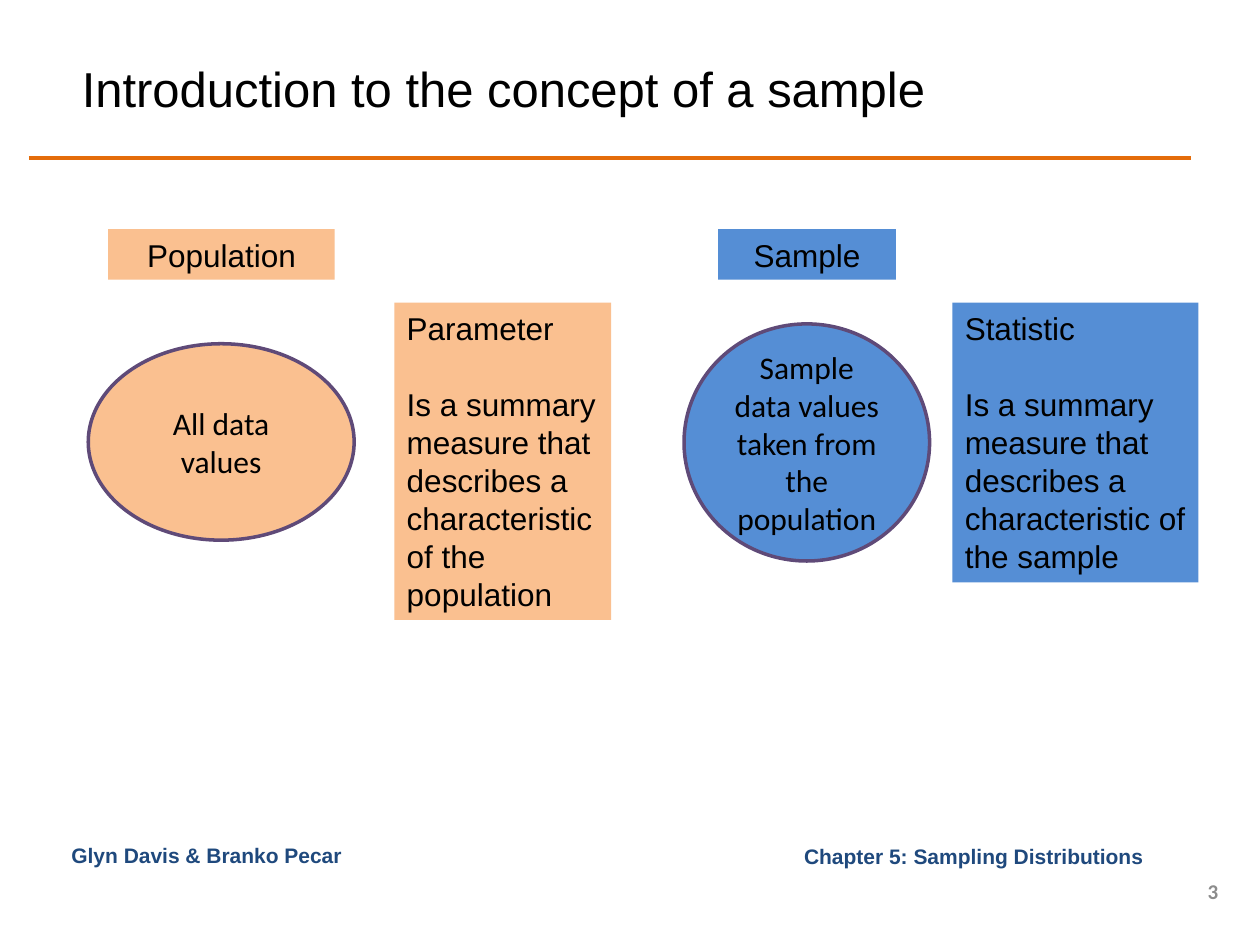
from dataclasses import dataclass

from lxml.etree import SubElement
from pptx import Presentation
from pptx.dml.color import RGBColor
from pptx.enum.shapes import MSO_CONNECTOR, MSO_SHAPE
from pptx.enum.text import MSO_ANCHOR as Anchor, PP_ALIGN as Align
from pptx.oxml.ns import qn
from pptx.util import Cm, Pt


def colour(hex_string):
    return RGBColor.from_string(hex_string)


@dataclass
class SlideBuilder:
    slide: object
    font: str = "Arial"
    body_size: int = 18
    line_height: float = 21.7
    ink: str = "000000"
    footer_ink: str = "1F497D"
    outline: str = "5F4A78"
    rule_colour: str = "E46C0A"

    def add_lines(self, shape, lines, size, ink, font=None, bold=False,
                  align=Align.LEFT, anchor=Anchor.MIDDLE, spacing=None):
        frame = shape.text_frame
        frame.word_wrap = True
        frame.vertical_anchor = anchor
        for index, line in enumerate(lines):
            paragraph = frame.add_paragraph() if index else frame.paragraphs[0]
            paragraph.alignment = align
            if spacing:
                paragraph.line_spacing = Pt(spacing)
                paragraph.space_before = Pt(spacing if index else 0)
            run = paragraph.add_run()
            run.text = line
            run.font.name = font or self.font
            run.font.size = Pt(size)
            run.font.bold = bold
            run.font.color.rgb = colour(ink)

    def text(self, box, line, size=12, ink=None, **style):
        shape = self.slide.shapes.add_textbox(*map(Cm, box))
        self.add_lines(shape, [line], size, ink or self.footer_ink, **style)

    def filled(self, kind, box, fill):
        shape = self.slide.shapes.add_shape(kind, *map(Cm, box))
        shape.shadow.inherit = False
        shape.fill.solid()
        shape.fill.fore_color.rgb = colour(fill)
        return shape

    def panel(self, box, fill, lines, align=Align.LEFT):
        shape = self.filled(MSO_SHAPE.RECTANGLE, box, fill)
        shape.line.fill.background()
        self.add_lines(shape, lines, self.body_size, self.ink, align=align,
                       anchor=Anchor.TOP, spacing=self.line_height)

    def ellipse(self, box, fill, line):
        shape = self.filled(MSO_SHAPE.OVAL, box, fill)
        shape.line.color.rgb = colour(self.outline)
        shape.line.width = Pt(2)
        self.add_lines(shape, [line], self.body_size, self.ink,
                       font="Calibri", align=Align.CENTER)

    def rule(self, left, right, top):
        connector = self.slide.shapes.add_connector(
            MSO_CONNECTOR.STRAIGHT, Cm(left), Cm(top), Cm(right), Cm(top))
        connector.line.color.rgb = colour(self.rule_colour)
        connector.line.width = Pt(2)
        SubElement(connector._element.spPr, qn("a:effectLst"))


def main():
    presentation = Presentation()
    presentation.slide_width, presentation.slide_height = Cm(25.4), Cm(19.05)
    builder = SlideBuilder(
        presentation.slides.add_slide(presentation.slide_layouts[6]))

    # Heading
    builder.rule(0.58, 24, 3.18)
    builder.text((1.4, 0.79, 19.25, 1.98),
                 "Introduction to the concept of a sample",
                 size=28, ink=builder.ink)

    # Footer
    builder.text((11.13, 16.87, 12.29, 0.79),
                 "Chapter 5: Sampling Distributions ",
                 bold=True, align=Align.RIGHT)
    builder.text((1.19, 16.87, 7.54, 0.79), "Glyn Davis & Branko Pecar",
                 bold=True, anchor=Anchor.TOP)
    builder.text((23.62, 17.65, 1.19, 0.61), "3", ink="8C8C8C",
                 font="Calibri", bold=True, align=Align.RIGHT)

    # Population and sample: label, ellipse and summary measure for each
    groups = [
        ("FAC090", "Population", (2.18, 4.57),
         "All data values", (1.78, 6.93, 5.36, 3.96),
         "Parameter", (7.95, 6.1, 4.37, 6.4)),
        ("558ED5", "Sample", (14.48, 3.58),
         "Sample data values taken from the population",
         (13.79, 6.53, 4.95, 4.78),
         "Statistic", (19.2, 6.1, 4.96, 5.64)),
    ]
    for fill, name, (left, width), data, ellipse_box, measure, box in groups:
        builder.panel((left, 4.62, width, 1.02), fill, [name], Align.CENTER)
        builder.ellipse(ellipse_box, fill, data)
        summary = ("Is a summary measure that describes a characteristic "
                   f"of the {name.lower()}")
        builder.panel(box, fill, [measure, summary])

    presentation.save("out.pptx")


if __name__ == "__main__":
    main()
